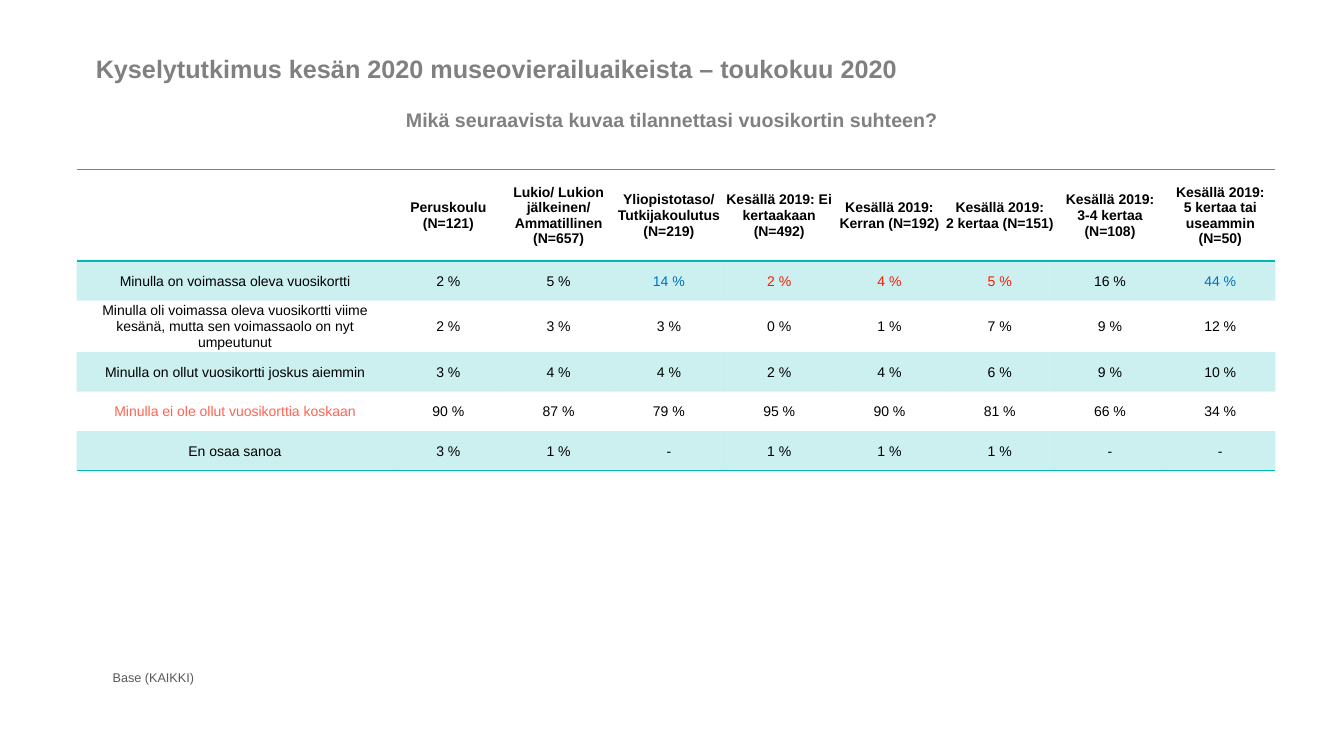
"""Build the slide on yearly card ownership by schooling and visits."""
from lxml.etree import SubElement
from pptx import Presentation
from pptx.dml.color import RGBColor
from pptx.enum.text import MSO_ANCHOR, PP_ALIGN
from pptx.oxml.ns import qn
from pptx.util import Inches, Pt

TITLE = "Kyselytutkimus kesän 2020 museovierailuaikeista – toukokuu 2020"
ASK = "Mikä seuraavista kuvaa tilannettasi vuosikortin suhteen?"
BASE = "Base (KAIKKI)"
HEADS = [
    "",
    "Peruskoulu (N=121)",
    "Lukio/ Lukion jälkeinen/ Ammatillinen (N=657)",
    "Yliopistotaso/ Tutkijakoulutus (N=219)",
    "Kesällä 2019: Ei kertaakaan (N=492)",
    "Kesällä 2019: Kerran (N=192)",
    "Kesällä 2019:\n2 kertaa (N=151)",
    "Kesällä 2019:\n3-4 kertaa (N=108)",
    "Kesällä 2019:\n5 kertaa tai useammin (N=50)",
]
ROWS = [
    ("Minulla on voimassa oleva vuosikortti", 2, 5, 14, 2, 4, 5, 16, 44),
    ("Minulla oli voimassa oleva vuosikortti viime kesänä, "
     "mutta sen voimassaolo on nyt umpeutunut", 2, 3, 3, 0, 1, 7, 9, 12),
    ("Minulla on ollut vuosikortti joskus aiemmin", 3, 4, 4, 2, 4, 6, 9, 10),
    ("Minulla ei ole ollut vuosikorttia koskaan",
     90, 87, 79, 95, 90, 81, 66, 34),
    ("En osaa sanoa", 3, 1, None, 1, 1, 1, None, None),
]
BLACK, GREY, DARK, TEAL = "000000", "808080", "595959", "00B7B4"
BLUE, RED, CORAL = "0070C0", "FD1900", "FF6352"
MARKS = {(1, 3): BLUE, (1, 8): BLUE, (1, 4): RED, (1, 5): RED, (1, 6): RED,
         (4, 0): CORAL}
LEFT, TOP, WIDTH, HEIGHT = 0.76, 1.68, 11.89, 2.87
LABEL, HEAD = 3.14, 0.91


def color(code):
    return RGBColor.from_string(code)


def write(frame, text, size, code, bold=False, align=PP_ALIGN.LEFT):
    frame.text = text
    frame.word_wrap = True
    for line in frame.paragraphs:
        line.alignment = align
        font = line.font
        font.name, font.size, font.bold = "Arial", Pt(size), bold
        font.color.rgb = color(code)


def add_text(slide, box, *style):
    frame = slide.shapes.add_textbox(*map(Inches, box)).text_frame
    write(frame, *style)
    return frame


def rule(cell, side):
    line = SubElement(cell._tc.get_or_add_tcPr(), qn("a:ln" + side),
                      w=str(Pt(1)))
    fill = SubElement(line, qn("a:solidFill"))
    SubElement(fill, qn("a:srgbClr"), val=TEAL)


def tint(cell):
    cell.fill.solid()
    cell.fill.fore_color.rgb = color(TEAL)
    shade = cell._tc.tcPr.find(qn("a:solidFill"))[0]
    SubElement(shade, qn("a:alpha"), val="20000")


def show(value):
    if isinstance(value, str):
        return value
    return "-" if value is None else f"{value} %"


def add_grid(slide):
    data = [HEADS, *ROWS]
    last = len(data) - 1
    table = slide.shapes.add_table(
        len(data), len(HEADS), Inches(LEFT), Inches(TOP), Inches(WIDTH),
        Inches(HEIGHT)).table
    table.first_row = table.horz_banding = False
    style = table._tbl.tblPr.find(qn("a:tableStyleId"))
    style.text = "{2D5ABB26-0587-4C30-8999-92F81FD0307C}"
    step = (WIDTH - LABEL) / (len(HEADS) - 1)
    deep = (HEIGHT - HEAD) / last
    for c, col in enumerate(table.columns):
        col.width = Inches(step if c else LABEL)
    for r, values in enumerate(data):
        table.rows[r].height = Inches(deep if r else HEAD)
        for c, value in enumerate(values):
            cell = table.cell(r, c)
            cell.margin_left = cell.margin_right = Inches(0.01)
            cell.margin_top, cell.margin_bottom = Inches(0.01), 0
            cell.vertical_anchor = MSO_ANCHOR.MIDDLE
            write(cell.text_frame, show(value), 10,
                  MARKS.get((r, c), BLACK), r == 0, PP_ALIGN.CENTER)
            if r == 0:
                rule(cell, "T")
            if r in (0, last):
                rule(cell, "B")
            if r % 2:
                tint(cell)
            else:
                cell.fill.background()


def main():
    deck = Presentation()
    deck.slide_width, deck.slide_height = Inches(13.33), Inches(7.5)
    slide = deck.slides.add_slide(deck.slide_layouts[5])
    title = slide.shapes.title
    title.left, title.top = Inches(0.85), Inches(0.48)
    title.width, title.height = Inches(11.63), Inches(0.4)
    write(title.text_frame, TITLE, 18, GREY, True)
    ask = add_text(slide, (0.85, 1.02, 11.63, 0.34), ASK, 14, GREY, True,
                   PP_ALIGN.CENTER)
    ask.vertical_anchor = MSO_ANCHOR.MIDDLE
    add_grid(slide)
    add_text(slide, (1.02, 6.6, 11.63, 0.28), BASE, 9, DARK)
    deck.save("out.pptx")


if __name__ == "__main__":
    main()
